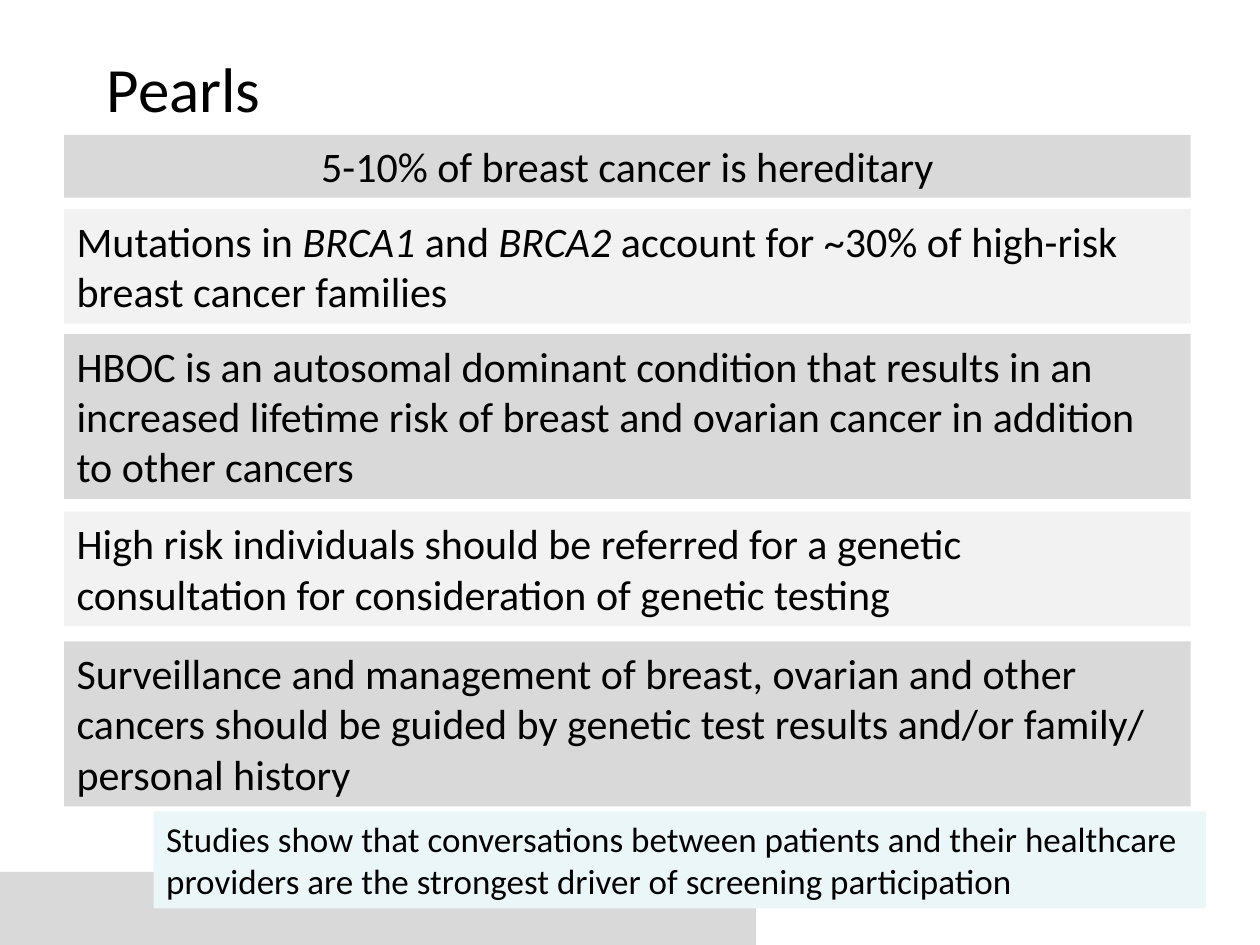
from dataclasses import dataclass
from typing import Optional

from pptx import Presentation
from pptx.dml.color import RGBColor
from pptx.enum.shapes import MSO_SHAPE
from pptx.enum.text import MSO_ANCHOR, PP_ALIGN
from pptx.util import Inches, Pt

FONT = "Calibri"
BLACK, GREY, PALE_GREY, PALE_BLUE = "000000", "D9D9D9", "F2F2F2", "EBF6F9"


@dataclass
class Span:
    text: str
    italic: bool = False


@dataclass
class Band:
    top: float
    height: float
    spans: list[Span]
    left: float = 0.51
    width: float = 8.94
    fill: Optional[str] = GREY
    size: int = 24
    align: PP_ALIGN = PP_ALIGN.LEFT
    wrap: bool = True


def colour(value: str) -> RGBColor:
    return RGBColor.from_string(value)


def draw_band(page, band: Band) -> None:
    """Draw a text band, filled when it has a fill colour."""
    place = [Inches(n) for n in (band.left, band.top, band.width, band.height)]
    if band.fill is None:
        box = page.shapes.add_textbox(*place)
    else:
        box = page.shapes.add_shape(MSO_SHAPE.RECTANGLE, *place)
        box.shadow.inherit = False
        box.fill.solid()
        box.fill.fore_color.rgb = colour(band.fill)
        box.line.fill.background()
    frame = box.text_frame
    frame.word_wrap = band.wrap
    frame.vertical_anchor = MSO_ANCHOR.TOP
    para = frame.paragraphs[0]
    para.alignment = band.align
    for span in band.spans:
        run = para.add_run()
        run.text = span.text
        run.font.name = FONT
        run.font.size = Pt(band.size)
        run.font.italic = span.italic
        run.font.color.rgb = colour(BLACK)


TITLE = Band(0.34, 0.71, [Span("Pearls")], left=0.75, width=1.57,
             fill=None, size=36, wrap=False)

PEARLS = [
    Band(1.07, 0.5, [Span("5-10% of breast cancer is hereditary")],
         align=PP_ALIGN.CENTER),
    Band(1.66, 0.91, [
        Span("Mutations in "), Span("BRCA1", italic=True), Span(" and "),
        Span("BRCA2 ", italic=True),
        Span("account for ~30% of high-risk breast cancer families"),
    ], fill=PALE_GREY),
    Band(2.65, 1.31, [Span(
        "HBOC is an autosomal dominant condition that results in an increased "
        "lifetime risk of breast and ovarian cancer in addition to other cancers")]),
    Band(4.06, 0.91, [Span(
        "High risk individuals should be referred for a genetic consultation "
        "for consideration of genetic testing")], fill=PALE_GREY),
    Band(5.09, 1.31, [Span(
        "Surveillance and management of breast, ovarian and other cancers should "
        "be guided by genetic test results and/or family/ personal history")]),
]

CONCLUSION = Band(6.44, 0.77, [Span(
    "Studies show that conversations between patients and their healthcare "
    "providers are the strongest driver of screening participation")],
    left=1.22, width=8.35, fill=PALE_BLUE, size=20)

FOOTER = Band(6.92, 0.58, [], left=0, width=6)


def main() -> None:
    deck = Presentation()
    deck.slide_width, deck.slide_height = Inches(10), Inches(7.5)
    page = deck.slides.add_slide(deck.slide_layouts[6])

    # Footer bar, title, key points, then the closing note on top
    for band in [FOOTER, TITLE, *PEARLS, CONCLUSION]:
        draw_band(page, band)

    deck.save("out.pptx")


if __name__ == "__main__":
    main()
